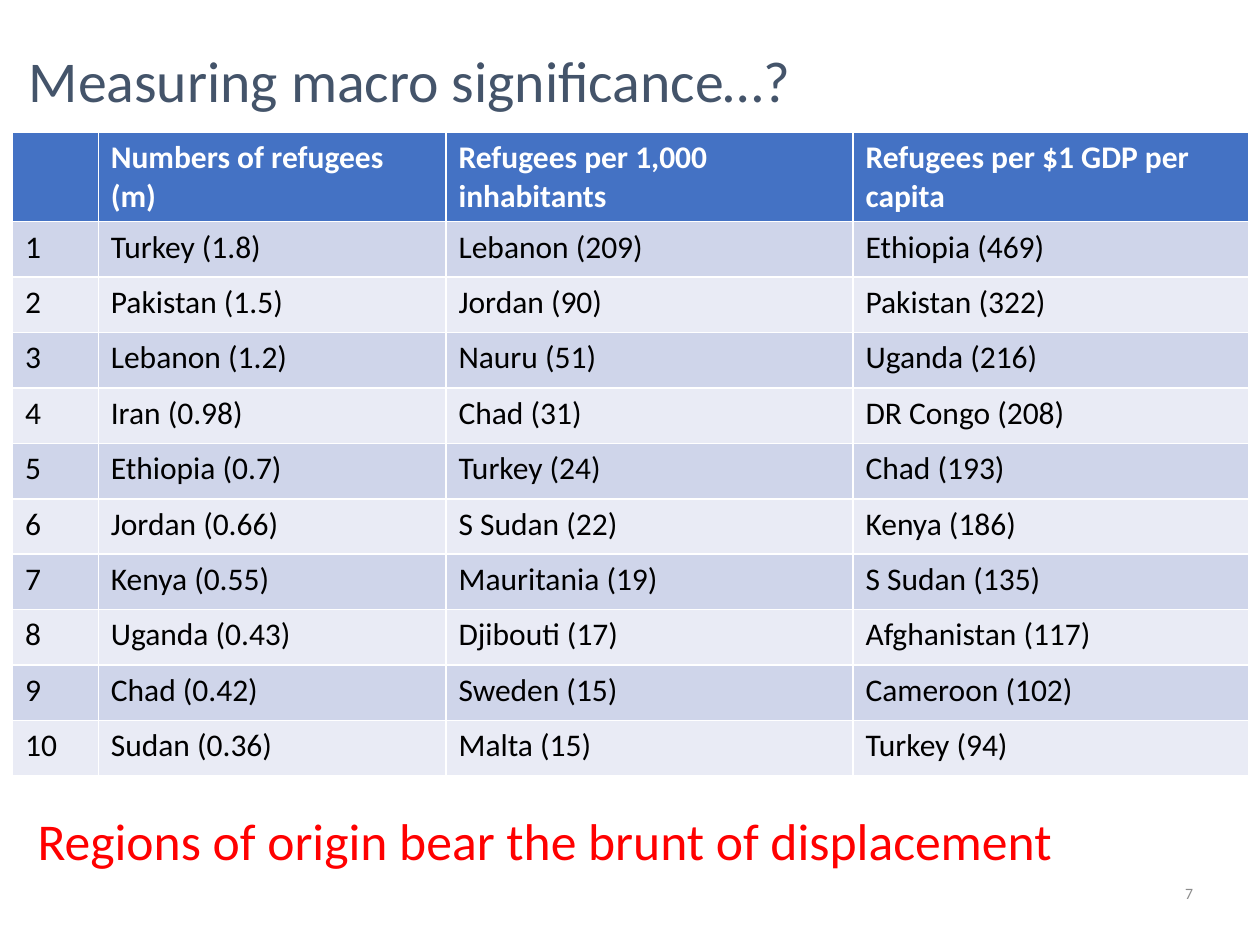
from dataclasses import dataclass

from pptx import Presentation
from pptx.dml.color import RGBColor
from pptx.enum.shapes import MSO_SHAPE
from pptx.enum.text import MSO_ANCHOR, PP_ALIGN
from pptx.util import Inches, Pt

HUES = {
    "title": "44546A", "page": "8C8C8C", "head": "4472C4", "odd": "CFD5EA",
    "even": "E9EBF5", "white": "FFFFFF", "black": "000000", "red": "FF0000",
}
FONT = "Calibri"
WIDTHS = (0.68, 2.76, 3.23, 3.14)
HEAD_H, ROW_H = 0.71, 0.44
HEADS = ("", "Numbers of refugees (m)", "Refugees per 1,000 inhabitants",
         "Refugees per $1 GDP per capita")
RANKS = (
    ("Turkey (1.8)", "Lebanon (209)", "Ethiopia (469)"),
    ("Pakistan (1.5)", "Jordan (90)", "Pakistan (322)"),
    ("Lebanon (1.2)", "Nauru (51)", "Uganda (216)"),
    ("Iran (0.98)", "Chad (31)", "DR Congo (208)"),
    ("Ethiopia (0.7)", "Turkey (24)", "Chad (193)"),
    ("Jordan (0.66)", "S Sudan (22)", "Kenya (186)"),
    ("Kenya (0.55)", "Mauritania (19)", "S Sudan (135)"),
    ("Uganda (0.43)", "Djibouti (17)", "Afghanistan (117)"),
    ("Chad (0.42)", "Sweden (15)", "Cameroon (102)"),
    ("Sudan (0.36)", "Malta (15)", "Turkey (94)"),
)


@dataclass
class Label:
    text: str
    box: tuple[float, float, float, float]
    size: float
    hue: str
    fill: str | None = None
    anchor: MSO_ANCHOR = MSO_ANCHOR.MIDDLE
    align: PP_ALIGN = PP_ALIGN.LEFT
    inset: float = 0.1
    space: float = 1.0
    wrap: bool = True


LABELS = (
    Label("Measuring macro significance…?", (0.13, -0.09, 7.97, 1.51), 33,
          "title", space=0.9),
    Label("7", (9.35, 6.97, 0.16, 0.24), 9, "page", align=PP_ALIGN.RIGHT,
          inset=0.04, wrap=False),
    Label("Regions of origin bear the brunt of displacement",
          (0.2, 6.37, 10, 0.6), 29.5, "red", fill="white",
          anchor=MSO_ANCHOR.TOP),
)


def color(hue: str) -> RGBColor:
    return RGBColor.from_string(HUES[hue])


def style(para, size: float, hue: str, bold: bool = False) -> None:
    for run in para.runs:
        run.font.name = FONT
        run.font.size = Pt(size)
        run.font.bold = bold
        run.font.color.rgb = color(hue)


def paint(item, hue: str) -> None:
    item.fill.solid()
    item.fill.fore_color.rgb = color(hue)


def draw_label(slide, label: Label) -> None:
    box = [Inches(n) for n in label.box]
    if label.fill:
        shape = slide.shapes.add_shape(MSO_SHAPE.RECTANGLE, *box)
        shape.shadow.inherit = False
        shape.line.fill.background()
        paint(shape, label.fill)
    else:
        shape = slide.shapes.add_textbox(*box)
    frame = shape.text_frame
    frame.text = label.text
    frame.word_wrap = label.wrap
    frame.vertical_anchor = label.anchor
    frame.margin_left = frame.margin_right = Inches(label.inset)
    para = frame.paragraphs[0]
    para.alignment = label.align
    para.line_spacing = label.space
    style(para, label.size, label.hue)


def draw_table(slide) -> None:
    rows = [HEADS] + [(str(n), *rank) for n, rank in enumerate(RANKS, 1)]
    high = HEAD_H + ROW_H * len(RANKS)
    table = slide.shapes.add_table(
        len(rows), len(WIDTHS), Inches(0.1), Inches(1.05),
        Inches(sum(WIDTHS)), Inches(high)).table
    for col, width in zip(table.columns, WIDTHS):
        col.width = Inches(width)
    for r, row in enumerate(rows):
        head = r == 0
        table.rows[r].height = Inches(HEAD_H if head else ROW_H)
        fill = "head" if head else ("even", "odd")[r % 2]
        for c, text in enumerate(row):
            cell = table.cell(r, c)
            cell.text_frame.text = text
            paint(cell, fill)
            style(cell.text_frame.paragraphs[0], 18,
                  "white" if head else "black", head)


def main() -> None:
    """Build the slide that ranks refugee hosts by three measures."""
    deck = Presentation()
    deck.slide_width, deck.slide_height = Inches(10), Inches(7.5)
    slide = deck.slides.add_slide(deck.slide_layouts[6])
    title, page, claim = LABELS
    draw_label(slide, title)
    draw_label(slide, page)
    draw_table(slide)
    draw_label(slide, claim)
    deck.save("out.pptx")


if __name__ == "__main__":
    main()
